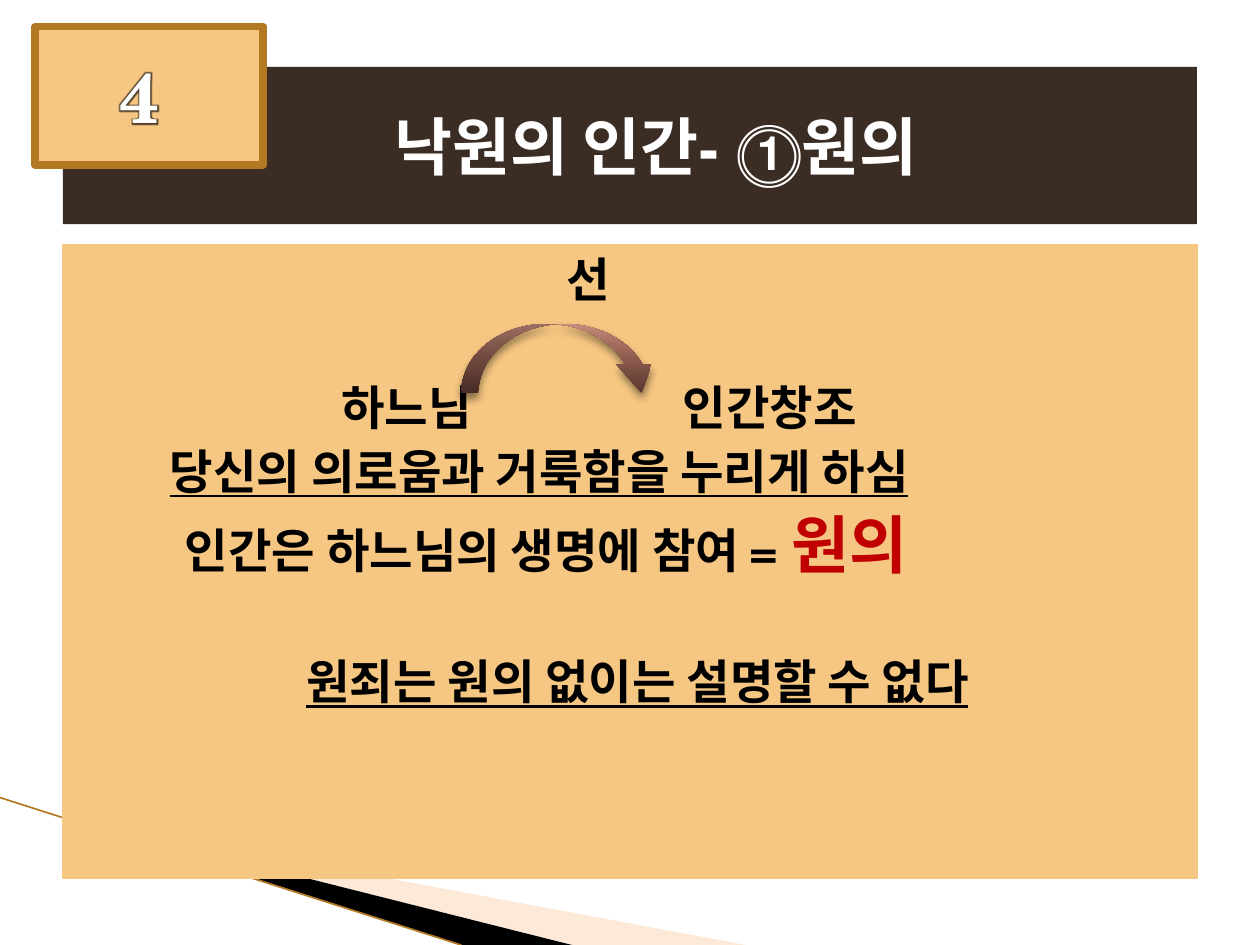
from dataclasses import dataclass

from lxml import etree
from pptx import Presentation
from pptx.dml.color import RGBColor
from pptx.enum.shapes import MSO_CONNECTOR, MSO_SHAPE
from pptx.enum.text import MSO_ANCHOR, PP_ALIGN
from pptx.oxml import parse_xml
from pptx.oxml.ns import nsdecls, qn
from pptx.util import Inches, Pt

RECTANGLE = MSO_SHAPE.RECTANGLE
CURVED_ARROW = MSO_SHAPE.CURVED_DOWN_ARROW
STRAIGHT = MSO_CONNECTOR.STRAIGHT
TOP, MIDDLE = MSO_ANCHOR.TOP, MSO_ANCHOR.MIDDLE
LEFT, CENTER = PP_ALIGN.LEFT, PP_ALIGN.CENTER


@dataclass(frozen=True)
class Theme:
    font: str = "TeX Gyre Schola"
    sand: str = "F6C782"
    brown: str = "3B2C24"
    gold: str = "B27822"
    peach: str = "FBC99E"
    black: str = "000000"
    white: str = "FFFFFF"
    red: str = "C00000"
    glow: str = "4A3A26"
    arrow_stops: tuple = ((0, "59372F"), (50, "8D5B4D"), (70, "A36E60"), (100, "C68B7C"))
    body_size: int = 27
    title_size: int = 36
    number_size: int = 40


THEME = Theme()


@dataclass(frozen=True)
class Words:
    text: str
    size: int = THEME.body_size
    color: str = THEME.black
    underline: bool = False


@dataclass(frozen=True)
class Line:
    words: tuple
    indent: float = 0
    before: float = 4
    align: int = LEFT


@dataclass(frozen=True)
class Panel:
    box: tuple
    fill: str
    lines: tuple
    anchor: int = MIDDLE
    border: str = ""
    border_width: float = 0
    right_inset: float = 0.1


BLANK_LINE = 40.4  # space before that stands for one skipped line

BODY = Panel((0.5, 1.94, 9, 5.03), THEME.sand, (
    Line((Words("선"),), indent=3.9, before=0),
    Line((Words("하느님"),), indent=2.11, before=BLANK_LINE),
    Line((Words("당신의 의로움과 거룩함을 누리게 하심", underline=True),), indent=0.75),
    Line((Words("인간은 하느님의 생명에 참여 = "),
          Words("원의", THEME.title_size, THEME.red)), indent=0.87),
    Line((Words("원죄는 원의 없이는 설명할 수 없다", underline=True),),
         indent=0.12, before=BLANK_LINE, align=CENTER),
), TOP, THEME.sand, 0.75)

TITLE = Panel((0.5, 0.53, 9, 1.25), THEME.brown, (
    Line((Words("낙원의 인간- ⓵원의", THEME.title_size, THEME.white),), indent=2.53, before=0),
))

NUMBER = Panel((0.28, 0.21, 1.81, 1.1), THEME.sand, (
    Line((Words("4", THEME.number_size, THEME.white),), before=0, align=CENTER),
), border=THEME.gold, border_width=4.33, right_inset=0.26)

# Label at the arrow's end, level with the body's second line
CREATION_BOX = (5.32, 2.95, 1.7, 0.55)
CREATION = Line((Words("인간창조"),), before=0)


def rgb(color: str) -> RGBColor:
    return RGBColor.from_string(color)


def paint(shape, color: str) -> None:
    shape.shadow.inherit = False
    shape.fill.solid()
    shape.fill.fore_color.rgb = rgb(color)
    shape.line.fill.background()


def write_line(paragraph, line: Line) -> None:
    props = paragraph._p.get_or_add_pPr()
    props.set("marL", str(Inches(line.indent)))
    props.set("indent", "0")
    paragraph.alignment = line.align
    paragraph.space_before = Pt(line.before)
    for words in line.words:
        run = paragraph.add_run()
        run.text = words.text
        formats = {"name": THEME.font, "size": Pt(words.size),
                   "bold": True, "underline": words.underline}
        for name, value in formats.items():
            setattr(run.font, name, value)
        run.font.color.rgb = rgb(words.color)


def write_lines(frame, lines: tuple, anchor: int, right_inset: float = 0.1) -> None:
    formats = {"word_wrap": True, "vertical_anchor": anchor,
               "margin_left": Inches(0.1), "margin_right": Inches(right_inset),
               "margin_top": Inches(0.05), "margin_bottom": Inches(0.05)}
    for name, value in formats.items():
        setattr(frame, name, value)
    for index, line in enumerate(lines):
        write_line(frame.add_paragraph() if index else frame.paragraphs[0], line)


def draw_panel(slide, panel: Panel):
    shape = slide.shapes.add_shape(RECTANGLE, *map(Inches, panel.box))
    paint(shape, panel.fill)
    if panel.border:
        shape.line.color.rgb = rgb(panel.border)
        shape.line.width = Pt(panel.border_width)
    write_lines(shape.text_frame, panel.lines, panel.anchor, panel.right_inset)
    return shape


def draw_label(slide, box: tuple, line: Line) -> None:
    label = slide.shapes.add_textbox(*map(Inches, box))
    write_lines(label.text_frame, (line,), TOP)


def draw_wedge(slide, points: tuple, color: str, alpha: int = 100) -> None:
    start, *rest = [(Inches(x), Inches(y)) for x, y in points]
    builder = slide.shapes.build_freeform(*start)
    builder.add_line_segments(rest, close=True)
    wedge = builder.convert_to_shape()
    paint(wedge, color)
    if alpha < 100:
        tone = wedge._element.spPr.find(".//" + qn("a:srgbClr"))
        etree.SubElement(tone, qn("a:alpha"), val=str(alpha * 1000))


def draw_edge(slide, start: tuple, end: tuple) -> None:
    edge = slide.shapes.add_connector(STRAIGHT, *map(Inches, start + end))
    edge.line.color.rgb = rgb(THEME.gold)
    edge.line.width = Pt(0.95)
    etree.SubElement(edge._element.spPr, qn("a:effectLst"))


def draw_arrow(slide, box: tuple) -> None:
    arrow = slide.shapes.add_shape(CURVED_ARROW, *map(Inches, box))
    for index, value in enumerate((0.25, 0.5, 0.41)):
        arrow.adjustments[index] = value
    arrow.line.fill.background()
    # Four-stop gradient, dark at the bottom
    arrow.fill.gradient()
    arrow.fill.gradient_angle = 90
    stops = arrow._element.spPr.find(".//" + qn("a:gsLst"))
    for stop in list(stops):
        stops.remove(stop)
    for position, color in THEME.arrow_stops:
        stop = etree.SubElement(stops, qn("a:gs"), pos=str(position * 1000))
        etree.SubElement(stop, qn("a:srgbClr"), val=color)
    # Soft shadow below
    arrow.shadow.inherit = False
    arrow._element.spPr.find(qn("a:effectLst")).append(parse_xml(
        f'<a:outerShdw {nsdecls("a")} blurRad="{Pt(5)}" dist="{Pt(3)}" dir="5400000">'
        f'<a:srgbClr val="{THEME.black}"><a:alpha val="45000"/></a:srgbClr></a:outerShdw>'))


def add_text_glow(shape) -> None:
    props = shape.text_frame.paragraphs[0].runs[0]._r.rPr
    props.find(qn("a:solidFill")).addnext(parse_xml(
        f'<a:effectLst {nsdecls("a")}><a:glow rad="{Pt(3)}">'
        f'<a:srgbClr val="{THEME.glow}"/></a:glow></a:effectLst>'))


def main() -> None:
    deck = Presentation()
    deck.slide_width, deck.slide_height = Inches(10), Inches(7.5)
    slide = deck.slides.add_slide(deck.slide_layouts[6])

    # Corner decoration
    draw_wedge(slide, ((0.55, 6.5), (5.92, 7.5), (4.54, 7.5)), THEME.peach, 40)
    draw_wedge(slide, ((0.53, 6.49), (4.54, 7.5), (3.67, 7.5)), THEME.black)
    draw_edge(slide, (0, 6.33), (3.66, 7.5))

    # Body, title, arrow and number badge
    draw_panel(slide, BODY)
    draw_label(slide, CREATION_BOX, CREATION)
    draw_panel(slide, TITLE)
    draw_arrow(slide, (3.66, 2.57, 1.57, 0.55))
    add_text_glow(draw_panel(slide, NUMBER))

    deck.save("out.pptx")


if __name__ == "__main__":
    main()
